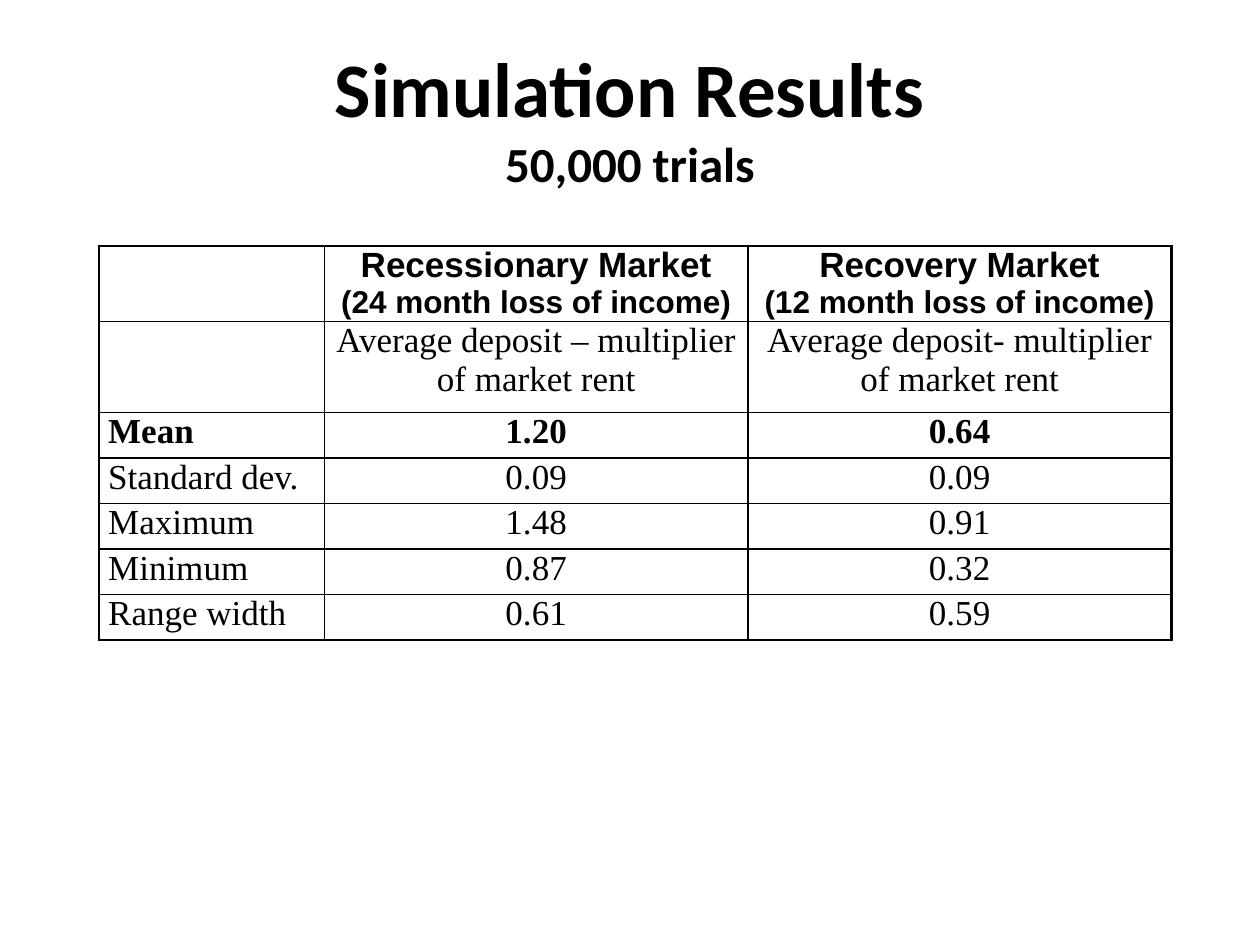
from lxml.etree import SubElement
from pptx import Presentation
from pptx.dml.color import RGBColor
from pptx.enum.text import MSO_ANCHOR as Anchor, PP_ALIGN as Align
from pptx.oxml.ns import qn
from pptx.util import Pt

BLACK = RGBColor(0x00, 0x00, 0x00)

HEADINGS = [
    ("Recessionary Market", "(24 month loss of income)"),
    ("Recovery Market", "(12 month loss of income)"),
]
MEASURES = ["Average deposit – multiplier of market rent", "Average deposit- multiplier of market rent"]
STATISTICS = [
    ("Mean", "1.20", "0.64"),
    ("Standard dev.", "0.09", "0.09"),
    ("Maximum", "1.48", "0.91"),
    ("Minimum", "0.87", "0.32"),
    ("Range width", "0.61", "0.59"),
]
COLUMN_WIDTHS = [129, 242, 242]
ROW_HEIGHTS = [43.4, 52] + [26] * len(STATISTICS)


class SlideBuilder:
    """Holds the style and the current slide."""

    title_font = "Calibri"
    heading_font = "Arial"
    body_font = "Times New Roman"
    color = BLACK
    outer_line = 1.5
    inner_line = 1
    cell_margin = 5.4

    def __init__(self, slide):
        self.slide = slide

    def add_run(self, paragraph, text, font_name, size, bold=False):
        run = paragraph.add_run()
        run.text = text
        run.font.name = font_name
        run.font.size = Pt(size)
        run.font.bold = bold
        run.font.color.rgb = self.color

    def add_title(self, title, subtitle):
        shape = self.slide.shapes.title
        shape.left, shape.top, shape.width, shape.height = Pt(36), Pt(21.6), Pt(648), Pt(90)
        shape.text_frame.vertical_anchor = Anchor.MIDDLE
        paragraph = shape.text_frame.paragraphs[0]
        paragraph.alignment = Align.CENTER
        self.add_run(paragraph, title, self.title_font, 44, True)
        paragraph.add_line_break()
        self.add_run(paragraph, subtitle, self.title_font, 28, True)

    def add_table(self, left, top, widths, heights):
        table = self.slide.shapes.add_table(
            len(heights), len(widths), Pt(left), Pt(top), Pt(sum(widths)), Pt(sum(heights))
        ).table
        table.first_row = table.horz_banding = False
        for column, width in zip(table.columns, widths):
            column.width = Pt(width)
        for row, height in zip(table.rows, heights):
            row.height = Pt(height)
        last_row, last_column = len(heights) - 1, len(widths) - 1
        for row in range(len(heights)):
            for column in range(len(widths)):
                outer_sides = {
                    "L": column == 0,
                    "R": column == last_column,
                    "T": row == 0,
                    "B": row == last_row,
                }
                self.style_cell(table.cell(row, column), outer_sides)
        return table

    def style_cell(self, cell, outer_sides):
        cell.margin_left = cell.margin_right = Pt(self.cell_margin)
        cell.margin_top = cell.margin_bottom = 0
        properties = cell._tc.get_or_add_tcPr()
        for side, is_outer in outer_sides.items():
            width = Pt(self.outer_line if is_outer else self.inner_line)
            line = SubElement(properties, qn(f"a:ln{side}"), w=str(width))
            fill = SubElement(line, qn("a:solidFill"))
            SubElement(fill, qn("a:srgbClr"), val=str(self.color))
        cell.fill.background()

    def add_heading(self, cell, market, detail):
        first = cell.text_frame.paragraphs[0]
        second = cell.text_frame.add_paragraph()
        for paragraph, text, size in ((first, market, 20), (second, detail, 18)):
            paragraph.alignment = Align.CENTER
            self.add_run(paragraph, text, self.heading_font, size, True)

    def add_entry(self, cell, text, alignment=Align.CENTER, bold=False):
        paragraph = cell.text_frame.paragraphs[0]
        paragraph.alignment = alignment
        self.add_run(paragraph, text, self.body_font, 20, bold)


def main():
    presentation = Presentation()
    presentation.slide_width, presentation.slide_height = Pt(720), Pt(540)
    slide = presentation.slides.add_slide(presentation.slide_layouts[5])
    builder = SlideBuilder(slide)
    builder.add_title("Simulation Results", "50,000 trials")

    table = builder.add_table(56.4, 140.4, COLUMN_WIDTHS, ROW_HEIGHTS)
    for column, (heading, measure) in enumerate(zip(HEADINGS, MEASURES), start=1):
        builder.add_heading(table.cell(0, column), *heading)
        builder.add_entry(table.cell(1, column), measure)
    for row, statistic in enumerate(STATISTICS, start=2):
        for column, text in enumerate(statistic):
            alignment = Align.CENTER if column else Align.LEFT
            builder.add_entry(table.cell(row, column), text, alignment, statistic[0] == "Mean")

    presentation.save("out.pptx")


if __name__ == "__main__":
    main()
